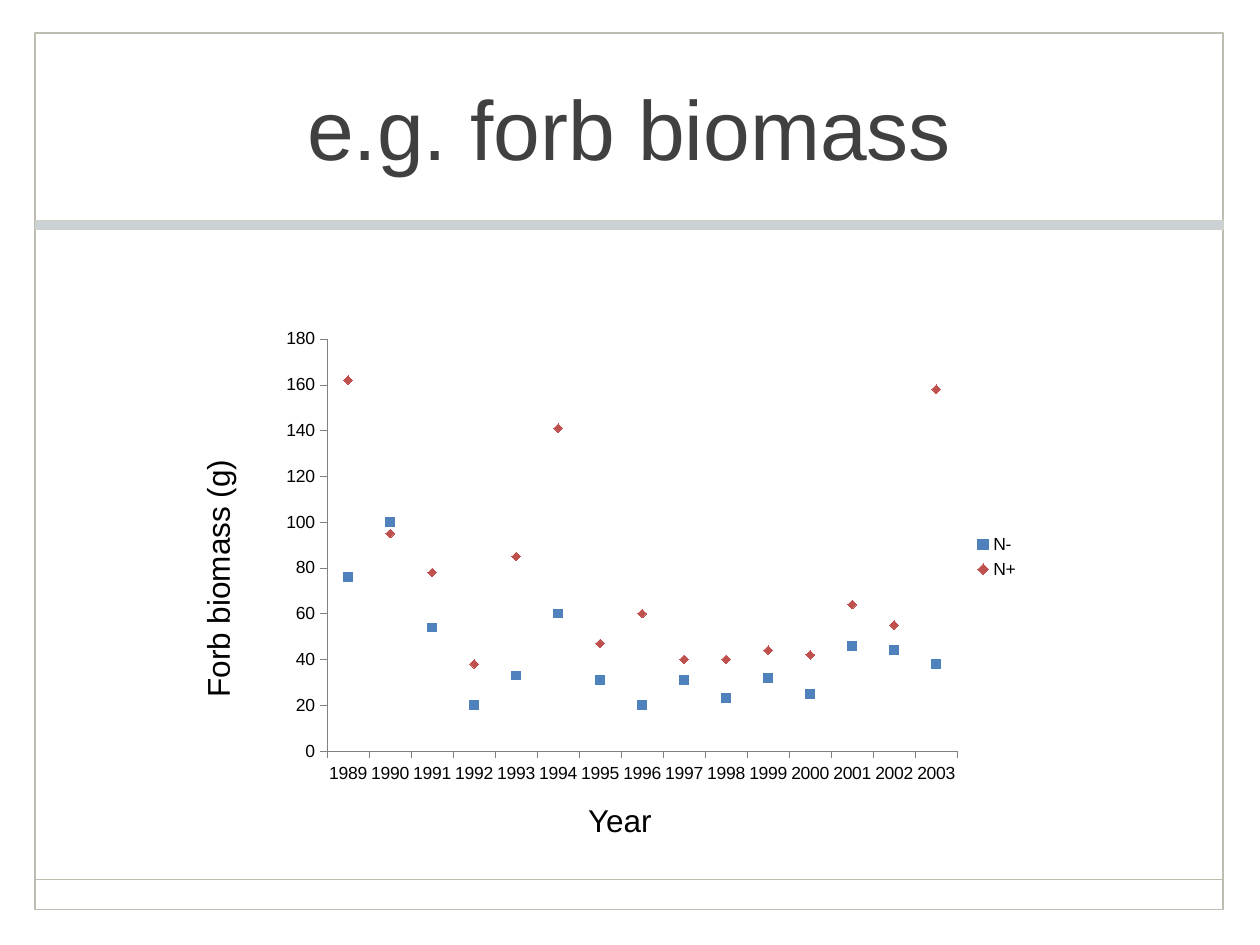
"""Build a slide that charts forb biomass by year with and without nitrogen."""
import pptx
import pptx.chart.data
import pptx.dml.color
import pptx.enum.chart
import pptx.enum.shapes
import pptx.enum.text
import pptx.oxml
import pptx.oxml.ns
import pptx.util


def colour(hex_text):
    return pptx.dml.color.RGBColor.from_string(hex_text)


def write(box, text, size, ink, align):
    frame = box.text_frame
    frame.word_wrap = True
    frame.text = text
    frame.paragraphs[0].alignment = align
    font = frame.paragraphs[0].font
    for name, value in {"size": pptx.util.Pt(size), "name": "Arial", "bold": False}.items():
        setattr(font, name, value)
    font.color.rgb = colour(ink)


deck = pptx.Presentation()
deck.slide_width = pptx.util.Inches(10)
deck.slide_height = pptx.util.Inches(7.5)
column, row = deck.slide_width // 100, deck.slide_height // 75
left, right, top, bottom = 2.8 * column, 97.1 * column, 2.6 * row, 72.2 * row
page = deck.slides.add_slide(deck.slide_layouts[5])
shapes = page.shapes
Align = pptx.enum.text.PP_ALIGN
rectangle = pptx.enum.shapes.MSO_SHAPE.RECTANGLE

border = shapes.add_shape(rectangle, int(left), int(top), int(right - left), int(bottom - top))
border.fill.background()
footer_rule = shapes.add_connector(
    pptx.enum.shapes.MSO_CONNECTOR.STRAIGHT,
    int(left), int(69.8 * row), int(right), int(69.8 * row))
pptx.oxml.ns.qn("a:effectLst")
footer_rule._element.spPr.append(pptx.oxml.parse_xml(
    '<a:effectLst xmlns:a="http://schemas.openxmlformats.org/drawingml/2006/main"/>'))
title_band = shapes.add_shape(
    rectangle, int(left), int(17.5 * row), int(right - left), int(0.7 * row))
title_band.fill.solid()
title_band.fill.fore_color.rgb = colour("CBD2D5")
for part, ink, width in ((border, "BEBDB2", 1), (footer_rule, "BEBDB2", 1),
                         (title_band, "D1D0C8", 0.25)):
    part.line.color.rgb = colour(ink)
    part.line.width = pptx.util.Pt(width)
for part in (border, title_band):
    part.shadow.inherit = False

heading = shapes.title
heading_place = {"left": 9.8 * column, "top": 2.7 * row,
                 "width": 80.3 * column, "height": 14.7 * row}
for name, value in heading_place.items():
    setattr(heading, name, int(value))
write(heading, "e.g. forb biomass", 48, "404040", Align.CENTER)
heading.text_frame.vertical_anchor = pptx.enum.text.MSO_ANCHOR.MIDDLE

biomass = pptx.chart.data.CategoryChartData()
biomass.categories = [str(year) for year in range(1989, 2004)]
biomass.add_series("N-", [76, 100, 54, 20, 33, 60, 31, 20, 31, 23, 32, 25, 46, 44, 38])
biomass.add_series("N+", [162, 95, 78, 38, 85, 141, 47, 60, 40, 40, 44, 42, 64, 55, 158])
chart = shapes.add_chart(
    pptx.enum.chart.XL_CHART_TYPE.LINE_MARKERS, int(21.5 * column), int(25.4 * row),
    int(60.4 * column), int(37.6 * row), biomass).chart
chart.has_title = False
chart.font.size = pptx.util.Pt(10)
chart.font.name = "Arial"
chart.font.color.rgb = colour("000000")
chart.has_legend = True
chart.legend.position = pptx.enum.chart.XL_LEGEND_POSITION.RIGHT
chart.legend.include_in_layout = False

axis_look = {"has_major_gridlines": False,
             "major_tick_mark": pptx.enum.chart.XL_TICK_MARK.OUTSIDE,
             "minor_tick_mark": pptx.enum.chart.XL_TICK_MARK.NONE}
for axis in (chart.category_axis, chart.value_axis):
    for name, value in axis_look.items():
        setattr(axis, name, value)
    axis.format.line.color.rgb = colour("808080")
    axis.format.line.width = pptx.util.Pt(0.25)
for name, value in {"minimum_scale": 0, "maximum_scale": 180, "major_unit": 20}.items():
    setattr(chart.value_axis, name, value)

Marker = pptx.enum.chart.XL_MARKER_STYLE
plot = chart.plots[0]
plot.vary_by_categories = False
for treatment, style, ink in zip(plot.series, (Marker.SQUARE, Marker.DIAMOND),
                                 ("4F81BD", "C0504D")):
    treatment.smooth = False
    treatment.format.line.fill.background()
    treatment.marker.style = style
    treatment.marker.size = 5
    treatment.marker.format.fill.solid()
    treatment.marker.format.fill.fore_color.rgb = colour(ink)
    treatment.marker.format.line.fill.background()

plot_area = chart._chartSpace.chart.plotArea
for old_layout in plot_area.findall(pptx.oxml.ns.qn("c:layout")):
    plot_area.remove(old_layout)
modes = '<c:layoutTarget val="inner"/><c:xMode val="edge"/><c:yMode val="edge"/>'
shares = "".join(f'<c:{side} val="{share}"/>' for side, share in
                 {"x": 0.074, "y": 0.04, "w": 0.828, "h": 0.87}.items())
plot_area.insert(0, pptx.oxml.parse_xml(
    '<c:layout xmlns:c="http://schemas.openxmlformats.org/drawingml/2006/chart">'
    f"<c:manualLayout>{modes}{shares}</c:manualLayout></c:layout>"))

for label, x, y, width, turn, align in (
        ("Forb biomass (g)", 5.1, 42.2, 24.3, 270, Align.LEFT),
        ("Year", 38.8, 63.1, 20.8, 0, Align.CENTER)):
    axis_label = shapes.add_textbox(
        int(x * column), int(y * row), int(width * column), 4 * row)
    axis_label.rotation = turn
    write(axis_label, label, 18, "000000", align)
    axis_label.text_frame.auto_size = pptx.enum.text.MSO_AUTO_SIZE.SHAPE_TO_FIT_TEXT

deck.save("out.pptx")
